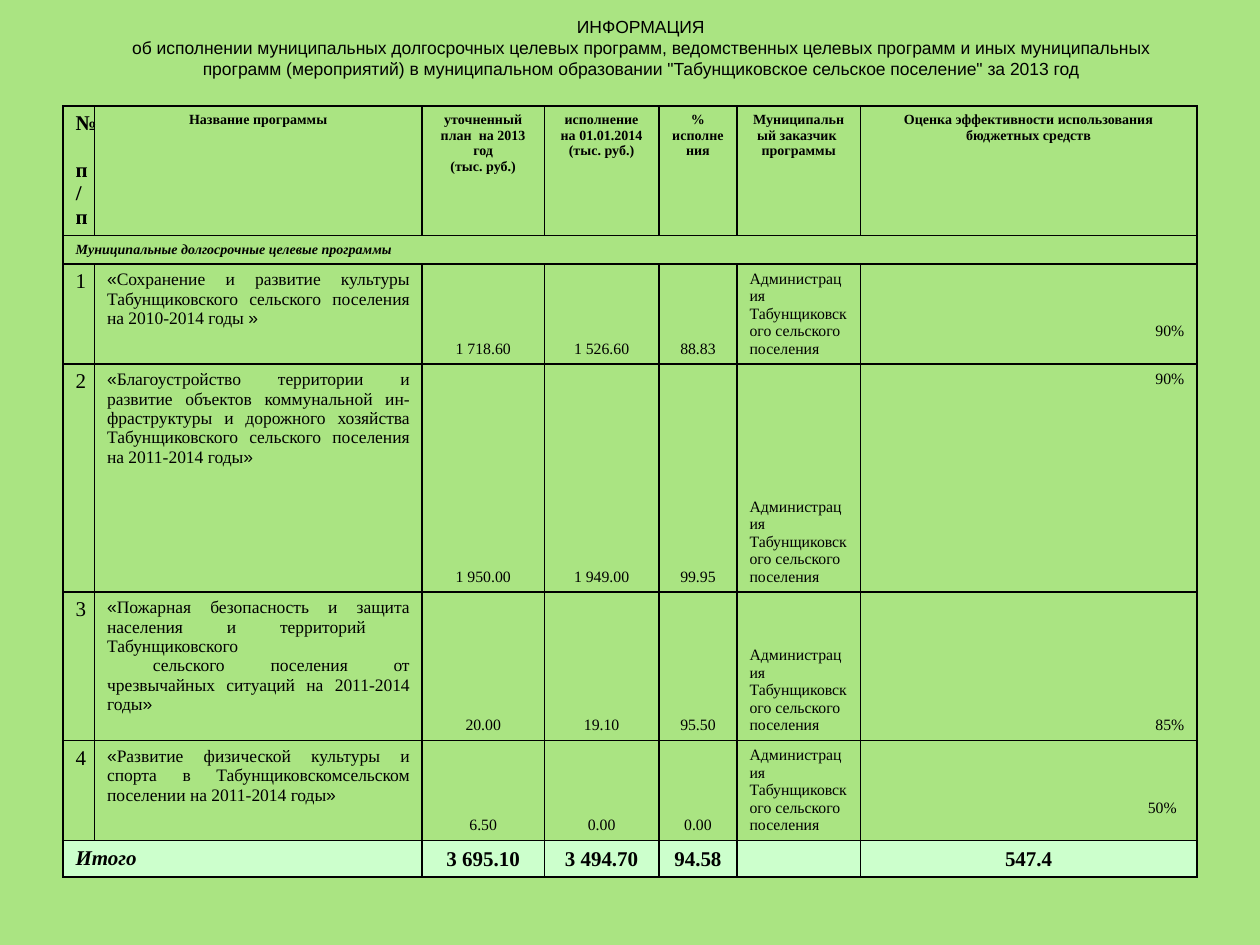
"""Build the slide on how the municipal programmes of 2013 were carried out."""
from dataclasses import dataclass

from lxml import etree
from pptx import Presentation
from pptx.dml.color import RGBColor
from pptx.enum.text import MSO_ANCHOR, MSO_AUTO_SIZE, PP_ALIGN
from pptx.oxml.ns import qn
from pptx.table import Table, _Cell
from pptx.text.text import TextFrame
from pptx.util import Inches, Pt

LEFT, CENTER, RIGHT, JUSTIFY = PP_ALIGN.LEFT, PP_ALIGN.CENTER, PP_ALIGN.RIGHT, PP_ALIGN.JUSTIFY
TOP, MIDDLE, BOTTOM = MSO_ANCHOR.TOP, MSO_ANCHOR.MIDDLE, MSO_ANCHOR.BOTTOM
NO_AUTOFIT = MSO_AUTO_SIZE.NONE
COLORS = {"background": "AAE482", "total": "CCFFCC", "ink": "000000"}
SERIF, SANS = "Times New Roman", "Arial"
COLUMN_WIDTHS = [0.25, 2.6, 0.97, 0.91, 0.62, 0.98, 2.67]
ROW_HEIGHTS = [1.03, 0.22, 0.79, 1.81, 1.18, 0.79, 0.29]
CUSTOMER = "Администрация Табунщиковского сельского поселения"
HEADING = (
    "ИНФОРМАЦИЯ\nоб исполнении муниципальных долгосрочных целевых программ, "
    "ведомственных целевых программ и иных муниципальных программ (мероприятий) "
    'в муниципальном образовании "Табунщиковское сельское поселение" за 2013 год'
)
HEADERS = [
    "№ п/п",
    "Название программы",
    "уточненный план  на 2013 год\n(тыс. руб.)",
    "исполнение на 01.01.2014\n(тыс. руб.)",
    "% исполнения",
    "Муниципальный заказчик  программы",
    "Оценка эффективности использования бюджетных средств",
]
TOTALS = ["3 695.10", "3 494.70", "94.58", "", "547.4"]


@dataclass
class Programme:
    """One programme with its figures and the place of its rating."""

    name: str
    plan: str
    spent: str
    percent: str
    rating: str
    rating_anchor: MSO_ANCHOR = BOTTOM
    rating_bottom: float = 0.05
    rating_right: float = 0.1


PROGRAMMES = [
    Programme("Сохранение и развитие культуры Табунщиковского сельского поселения "
              "на 2010-2014 годы ", "1 718.60", "1 526.60", "88.83", "90%", rating_bottom=0.19),
    Programme("Благоустройство территории и развитие объектов коммунальной ин-фраструктуры "
              "и дорожного хозяйства Табунщиковского сельского поселения на 2011-2014 годы",
              "1 950.00", "1 949.00", "99.95", "90%", rating_anchor=TOP),
    Programme("Пожарная безопасность и защита\nнаселения и территорий \nТабунщиковского\n"
              " сельского поселения от\nчрезвычайных ситуаций на 2011-2014 годы",
              "20.00", "19.10", "95.50", "85%"),
    Programme("Развитие физической культуры и спорта в Табунщиковскомсельском поселении "
              "на 2011-2014 годы", "6.50", "0.00", "0.00", "50%",
              rating_bottom=0.19, rating_right=0.16),
]


def write(frame: TextFrame, text: str, *, size: float = 9, font: str = SERIF,
          bold: bool = False, italic: bool = False, align: PP_ALIGN = CENTER,
          anchor: MSO_ANCHOR | None = None) -> None:
    """Append formatted text to the first paragraph of a frame."""
    paragraph = frame.paragraphs[0]
    paragraph.alignment = align
    if anchor is not None:
        frame.vertical_anchor = anchor
    for index, line in enumerate(text.split("\n")):
        if index:
            paragraph.add_line_break()
        run = paragraph.add_run()
        run.text = line
        run.font.size = Pt(size)
        run.font.name = font
        run.font.bold = bold
        run.font.italic = italic
        run.font.color.rgb = RGBColor.from_string(COLORS["ink"])


def write_cell(cell: _Cell, text: str, *, anchor: MSO_ANCHOR = BOTTOM, **style) -> None:
    """Write text in a table cell and anchor it."""
    cell.vertical_anchor = anchor
    write(cell.text_frame, text, **style)


def prepare_cell(cell: _Cell) -> None:
    """Clear the fill, draw all four borders and keep an empty cell low."""
    cell.fill.background()
    properties = cell._tc.get_or_add_tcPr()
    for index, side in enumerate(("lnL", "lnR", "lnT", "lnB")):
        border = etree.Element(qn(f"a:{side}"), w=str(Pt(1)))
        solid = etree.SubElement(border, qn("a:solidFill"))
        etree.SubElement(solid, qn("a:srgbClr"), val=COLORS["ink"])
        properties.insert(index, border)
    paragraph = cell.text_frame.paragraphs[0]
    etree.SubElement(paragraph._p, qn("a:endParaRPr"), sz="800")


def fill_programme(table: Table, row: int, number: int, programme: Programme) -> None:
    """Fill one programme row."""
    write_cell(table.cell(row, 0), str(number), size=12, anchor=TOP)
    name_cell = table.cell(row, 1)
    for text, font in (("«", SANS), (programme.name, SERIF), ("»", SANS)):
        write_cell(name_cell, text, size=10, font=font, align=JUSTIFY, anchor=TOP)
    figures = (programme.plan, programme.spent, programme.percent)
    for column, figure in enumerate(figures, start=2):
        write_cell(table.cell(row, column), figure)
    write_cell(table.cell(row, 5), CUSTOMER, align=LEFT)
    rating_cell = table.cell(row, 6)
    rating_cell.margin_bottom = Inches(programme.rating_bottom)
    rating_cell.margin_right = Inches(programme.rating_right)
    write_cell(rating_cell, programme.rating, align=RIGHT, anchor=programme.rating_anchor)


def fill_table(table: Table) -> None:
    """Fill the header, section, programme and total rows."""
    for column, header in enumerate(HEADERS):
        write_cell(table.cell(0, column), header, size=8 if column else 12,
                   bold=True, anchor=TOP)
    table.cell(1, 0).merge(table.cell(1, 6))
    write_cell(table.cell(1, 0), "Муниципальные долгосрочные целевые программы",
               size=8, bold=True, italic=True, align=LEFT)
    for number, programme in enumerate(PROGRAMMES, start=1):
        fill_programme(table, number + 1, number, programme)
    total_row = len(ROW_HEIGHTS) - 1
    table.cell(total_row, 0).merge(table.cell(total_row, 1))
    write_cell(table.cell(total_row, 0), "Итого", size=12, bold=True, italic=True,
               align=LEFT, anchor=TOP)
    for column, total in enumerate(TOTALS, start=2):
        if total:
            write_cell(table.cell(total_row, column), total, size=12, bold=True)
    for column in range(len(COLUMN_WIDTHS)):
        fill = table.cell(total_row, column).fill
        fill.solid()
        fill.fore_color.rgb = RGBColor.from_string(COLORS["total"])


def main() -> None:
    """Build and save the slide."""
    presentation = Presentation()
    presentation.slide_width, presentation.slide_height = Inches(10), Inches(7.5)
    slide = presentation.slides.add_slide(presentation.slide_layouts[5])
    background = slide.background.fill
    background.solid()
    background.fore_color.rgb = RGBColor.from_string(COLORS["background"])

    heading = slide.shapes.title
    heading.left, heading.top = Inches(0.67), Inches(0)
    heading.width, heading.height = Inches(8.83), Inches(0.76)
    heading.text_frame.auto_size = NO_AUTOFIT
    heading.text_frame.word_wrap = True
    write(heading.text_frame, HEADING, size=10, font=SANS, anchor=MIDDLE)

    table = slide.shapes.add_table(
        len(ROW_HEIGHTS), len(COLUMN_WIDTHS), Inches(0.5), Inches(0.84),
        Inches(sum(COLUMN_WIDTHS)), Inches(sum(ROW_HEIGHTS))).table
    table.first_row = table.horz_banding = False
    for column, width in zip(table.columns, COLUMN_WIDTHS):
        column.width = Inches(width)
    for row, height in zip(table.rows, ROW_HEIGHTS):
        row.height = Inches(height)
    for cell in table.iter_cells():
        prepare_cell(cell)
    fill_table(table)
    presentation.save("out.pptx")


if __name__ == "__main__":
    main()
